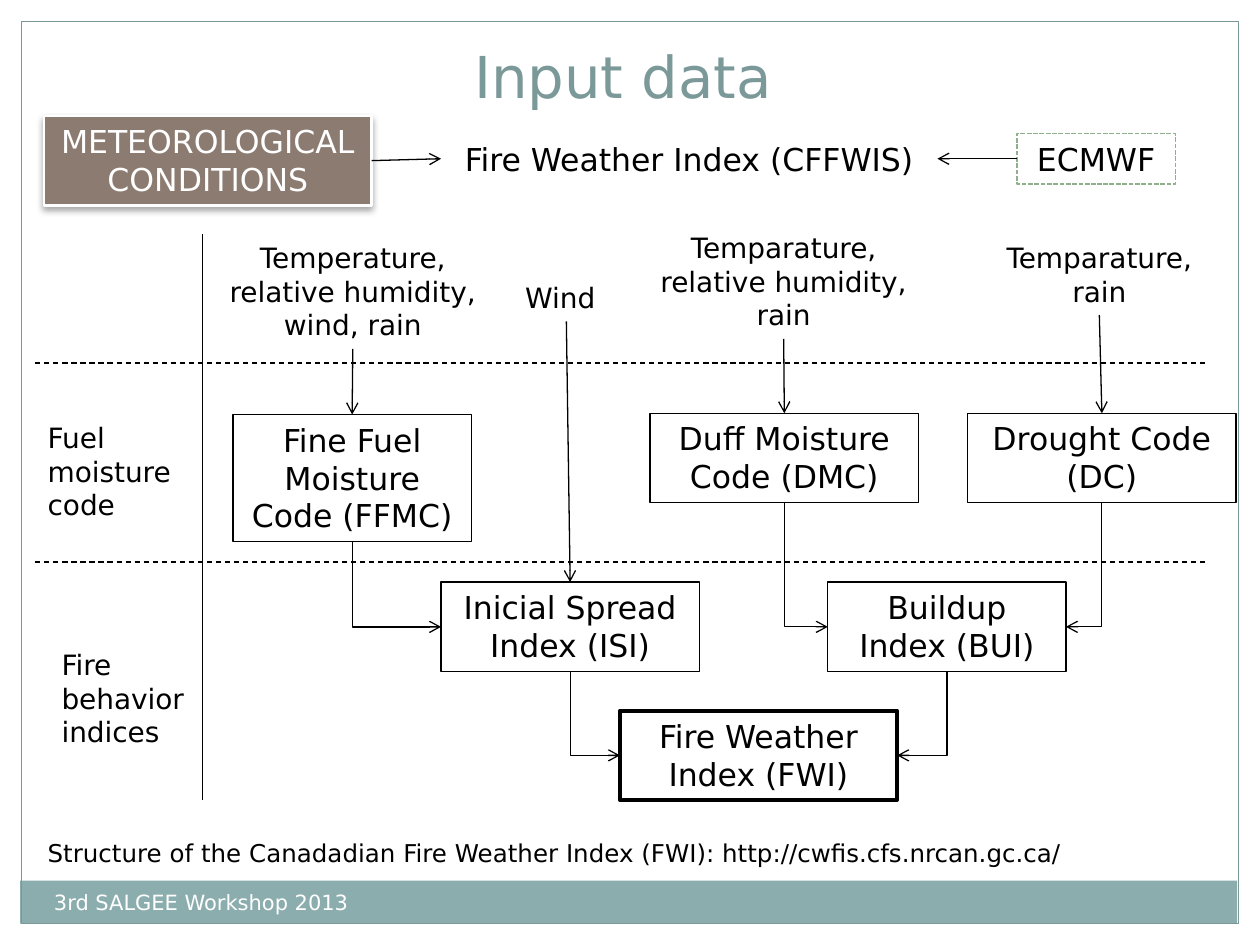
from lxml.etree import SubElement
from pptx import Presentation
from pptx.dml.color import RGBColor
from pptx.enum.dml import MSO_LINE as Dash
from pptx.enum.shapes import MSO_CONNECTOR as Connector, MSO_SHAPE as Shape
from pptx.enum.text import MSO_ANCHOR as Anchor, PP_ALIGN as Align
from pptx.oxml.ns import qn
from pptx.util import Inches, Pt

BLACK, WHITE = RGBColor(0, 0, 0), RGBColor(255, 255, 255)
TEAL, BAND = RGBColor(0x7C, 0x99, 0x9A), RGBColor(0x8C, 0xAD, 0xAE)
BROWN, GREEN = RGBColor(0x8C, 0x7B, 0x70), RGBColor(0x8F, 0xB0, 0x8C)
FONT = "DejaVu Sans"
TOP, LEFT, BOTTOM, RIGHT = range(4)  # connection sites of a rectangle

deck = Presentation()
deck.slide_width, deck.slide_height = Inches(10), Inches(7.5)
slide = deck.slides.add_slide(deck.slide_layouts[5])
shapes = slide.shapes
UNIT = deck.slide_width // 100  # grid of 100 columns by 75 rows


def add_block(text, at, size=18, align=Align.CENTER, color=BLACK,
              outline=None, weight=0.75, fill=None):
    """Text at (column, row, columns, rows), as a rectangle if outlined or filled."""
    area = [round(n * UNIT) for n in at]
    if outline is None and fill is None:
        block = shapes.add_textbox(*area)
    else:
        block = shapes.add_shape(Shape.RECTANGLE, *area)
        block.shadow.inherit = False
        if fill is None:
            block.fill.background()
        else:
            block.fill.solid()
            block.fill.fore_color.rgb = fill
        if outline is None:
            block.line.fill.background()
        else:
            block.line.color.rgb = outline
            block.line.width = Pt(weight)
    frame = block.text_frame
    frame.word_wrap, frame.vertical_anchor = True, Anchor.TOP
    frame.text = text
    for paragraph in frame.paragraphs:
        paragraph.alignment = align
        for run in paragraph.runs:
            for key, value in {"name": FONT, "size": Pt(size)}.items():
                setattr(run.font, key, value)
            run.font.color.rgb = color
    return block


def add_line(start=(0, 0), end=(0, 0), dash=None, glue=None, bent=False):
    """Plain line between grid points, or an arrow glued to two blocks."""
    ends = [round(n * UNIT) for n in (*start, *end)]
    line = shapes.add_connector(Connector.STRAIGHT, *ends)
    line.line.color.rgb, line.line.width = BLACK, Pt(0.75)
    if dash:
        line.line.dash_style = dash
    properties = line.element.spPr
    SubElement(properties, qn("a:effectLst"))
    if glue:
        source, source_site, target, target_site = glue
        line.begin_connect(source, source_site)
        line.end_connect(target, target_site)
        SubElement(properties.find(qn("a:ln")), qn("a:tailEnd"), type="arrow")
    if bent:
        # Down, then sideways: a quarter-turned elbow around the same centre
        across, down = line.end_x - line.begin_x, line.end_y - line.begin_y
        middle_x, middle_y = line.begin_x + across // 2, line.begin_y + down // 2
        turn = {"rot": "16200000", "flipH": "1"} if across > 0 else {"rot": "5400000"}
        transform = properties.find(qn("a:xfrm"))
        transform.attrib.clear()
        transform.attrib.update(turn)
        line.width, line.height = down, abs(across)
        line.left, line.top = middle_x - down // 2, middle_y - abs(across) // 2
        properties.find(qn("a:prstGeom")).set("prst", "bentConnector2")


# Slide frame and footer band
add_block("", (1.6, 69.9, 96.6, 3.4), fill=BAND)
add_block("", (1.7, 1.7, 96.6, 71.6), outline=TEAL)
add_block("3rd SALGEE Workshop 2013", (3.3, 70.1, 39.2, 4), 12, Align.LEFT, WHITE)

# Title
title = shapes.title
title_place = {"left": 2.8, "top": 0.9, "width": 93.3, "height": 8.3}
for key, value in title_place.items():
    setattr(title, key, round(value * UNIT))
title.text_frame.text = "Input data"
title.text_frame.vertical_anchor = Anchor.BOTTOM
heading = title.text_frame.paragraphs[0]
heading.alignment = Align.CENTER
for key, value in {"name": FONT, "size": Pt(33)}.items():
    setattr(heading.runs[0].font, key, value)
heading.runs[0].font.color.rgb = TEAL

# Data source row
conditions = add_block("METEOROLOGICAL\nCONDITIONS", (3.5, 9.2, 26, 7.1),
                       color=WHITE, outline=WHITE, weight=1.57, fill=BROWN)
shadow = SubElement(conditions.element.spPr.find(qn("a:effectLst")), qn("a:outerShdw"),
                    blurRad=str(Pt(4)), dist=str(Pt(2)), dir="5400000", rotWithShape="0")
shade = SubElement(shadow, qn("a:srgbClr"), val="000000")
SubElement(shade, qn("a:alpha"), val="35000")
system = add_block("Fire Weather Index (CFFWIS)", (35, 10.6, 39.4, 4))
provider = add_block("ECMWF", (80.7, 10.6, 12.6, 4), outline=GREEN, weight=0.9, fill=WHITE)
provider.line.dash_style = Dash.SQUARE_DOT

# Row labels and caption
for text, at, size in (
    ("Structure of the Canadadian Fire Weather Index (FWI): http://cwfis.cfs.nrcan.gc.ca/",
     (2.8, 66, 94.5, 3.4), 14),
    ("Fuel moisture code", (2.8, 32.9, 15, 9.1), 16),
    ("Fire behavior indices", (3.9, 50.9, 16.1, 9.1), 16),
):
    add_block(text, at, size, Align.LEFT)

# Weather inputs
ffmc_input = add_block("Temperature, relative humidity, wind, rain", (15.4, 18.6, 25.2, 9.1), 16)
wind = add_block("Wind", (40.7, 21.8, 8.5, 3.7), 16, Align.LEFT)
dmc_input = add_block("Temparature, relative humidity, rain", (50, 17.8, 24.4, 9.1), 16)
dc_input = add_block("Temparature, rain", (76.5, 18.6, 21.5, 6.4), 16)

# Moisture codes and behavior indices
ffmc, dmc, dc, isi, bui, fwi = [
    add_block(text, at, outline=BLACK, weight=weight)
    for text, at, weight in (
        ("Fine Fuel Moisture Code (FFMC)", (18.5, 32.9, 18.9, 10.1), 0.75),
        ("Duff Moisture Code (DMC)", (51.6, 32.8, 21.3, 7.1), 0.75),
        ("Drought Code (DC)", (76.8, 32.8, 21.3, 7.1), 0.75),
        ("Inicial Spread Index (ISI)", (35, 46.2, 20.5, 7.1), 0.75),
        ("Buildup Index (BUI)", (65.7, 46.2, 18.9, 7.1), 0.75),
        ("Fire Weather Index (FWI)", (49.2, 56.4, 22, 7.1), 2.25),
    )
]

# Dividers
add_line((16.1, 18.6), (16.1, 63.5))
for row in (28.8, 44.6):
    add_line((2.8, row), (95.7, row), Dash.DASH)

# Straight arrows
add_line(glue=(conditions, RIGHT, system, LEFT))
add_line(glue=(provider, LEFT, system, RIGHT))
for source, target in ((ffmc_input, ffmc), (wind, isi), (dmc_input, dmc), (dc_input, dc)):
    add_line(glue=(source, BOTTOM, target, TOP))

# Elbow arrows
for source, target, side in ((dc, bui, RIGHT), (dmc, bui, LEFT), (ffmc, isi, LEFT),
                             (bui, fwi, RIGHT), (isi, fwi, LEFT)):
    add_line(glue=(source, BOTTOM, target, side), bent=True)

deck.save("out.pptx")
